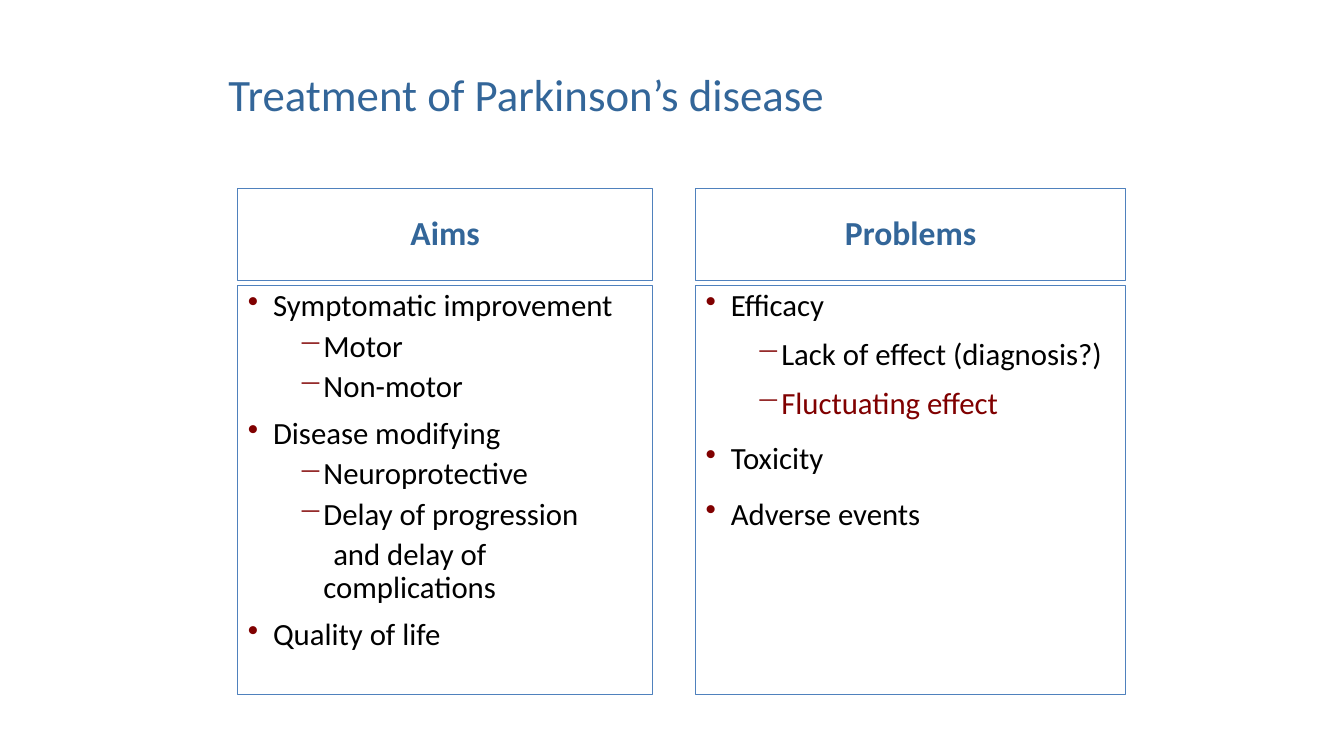
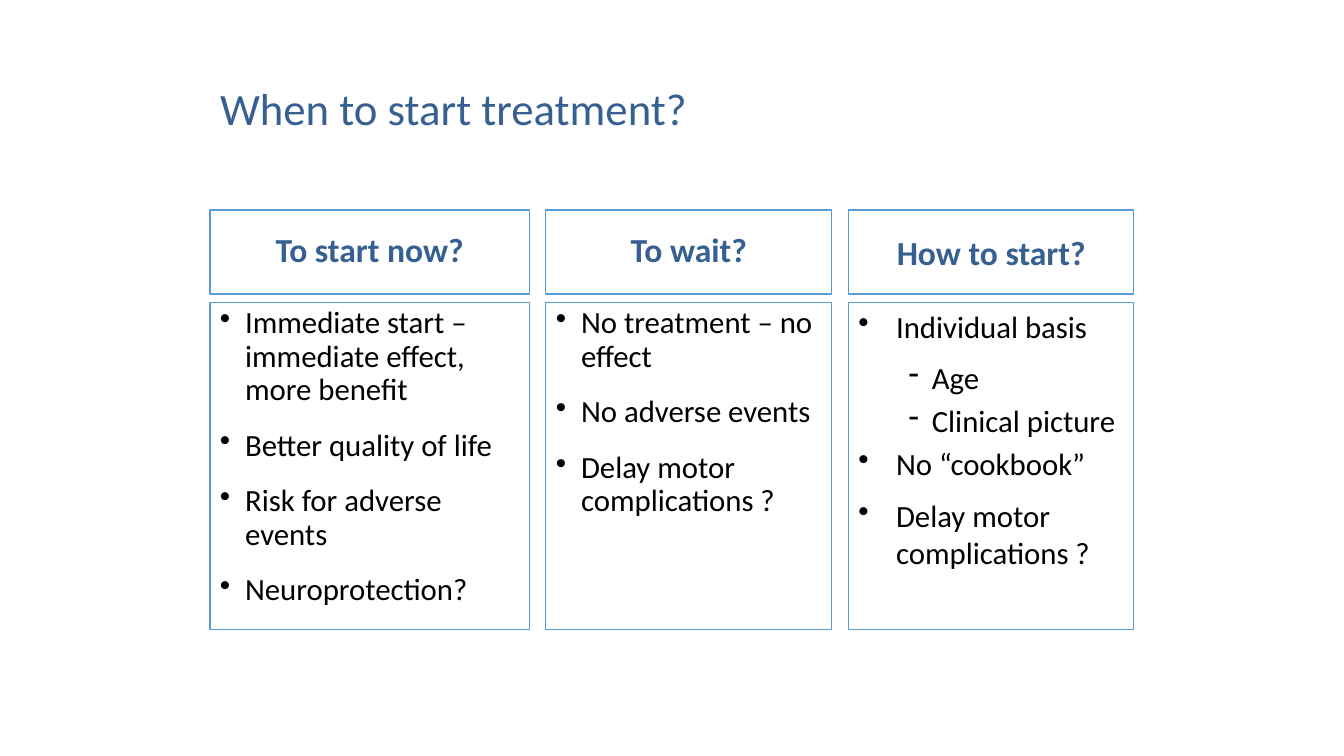
import pptx
import pptx.util
import pptx.dml.color
import pptx.enum.shapes
import pptx.enum.text
import pptx.oxml.ns
import lxml.etree

Pt = pptx.util.Pt
RGB = pptx.dml.color.RGBColor
ALIGN = pptx.enum.text.PP_ALIGN
ANCHOR = pptx.enum.text.MSO_ANCHOR

BLACK = RGB(0, 0, 0)
RED = RGB(0x80, 0, 0)
TEAL = RGB(0x33, 0x66, 0x99)
NAVY = RGB(0x37, 0x60, 0x92)
STEEL = RGB(0x4F, 0x81, 0xBD)
SKY = RGB(0x5B, 0x9B, 0xD5)
FACE = "Calibri"

TIGHT = {"line": 0.9, "head": 10, "before": (10, 5)}
LOOSE = {"line": 1.0, "head": 4.8, "before": (4.4, 4.4)}

KINDS = {
    "dot": (0, 18, -18, "•"),
    "dash": (1, 54, -18, "−"),
    "more": (1, 54, 7, None),
    "wide": (0, 27, -27, "•"),
    "tick": (1, 52.5, -16.5, "-"),
}

SLIDES = [
    {
        "title": "Treatment of Parkinson’s disease",
        "place": (156, 24), "ink": TEAL, "edge": STEEL, "mark": RED,
        "left": 170, "gap": 31, "head": (134.6, 65.5), "body": (203.8, 292.3),
        "cols": [
            ("Aims", 296, TIGHT, [
                ("dot", "Symptomatic improvement", 0),
                ("dash", "Motor", 0),
                ("dash", "Non-motor", 0),
                ("dot", "Disease modifying", 0),
                ("dash", "Neuroprotective", 0),
                ("dash", "Delay of progression", 0),
                ("more", "and delay of complications", 0),
                ("dot", "Quality of life", 0),
            ]),
            ("Problems", 307, TIGHT, [
                ("dot", "Efficacy", 6),
                ("dash", "Lack of effect (diagnosis?)", 6),
                ("dash", "Fluctuating effect", 6, RED),
                ("dot", "Toxicity", 6),
                ("dot", "Adverse events", 6),
            ]),
        ],
    },
    {
        "title": "When to start treatment?",
        "place": (150, 34), "ink": NAVY, "edge": SKY, "mark": None,
        "left": 150, "gap": 12, "head": (150, 60), "body": (216, 234),
        "cols": [
            ("To start now?", 228, TIGHT, [
                ("dot", "Immediate start – immediate effect, more benefit", 6),
                ("dot", "Better quality of life", 6),
                ("dot", "Risk for adverse events", 6),
                ("dot", "Neuroprotection?", 6),
            ]),
            ("To wait?", 204, TIGHT, [
                ("dot", "No treatment – no effect", 6),
                ("dot", "No adverse events", 6),
                ("dot", "Delay motor complications ?", 6),
            ]),
            ("How to start?", 204, LOOSE, [
                ("wide", "Individual basis", 6),
                ("tick", "Age", 0),
                ("tick", "Clinical picture", 0),
                ("wide", "No “cookbook”", 6),
                ("wide", "Delay motor complications ?", 6),
            ]),
        ],
    },
]


def style(para, text, size, ink, line, before=0, after=0, bold=False):
    para.text = text
    para.line_spacing = line
    para.space_before = Pt(before)
    para.space_after = Pt(after)
    font = para.font
    font.name = FACE
    font.size = Pt(size)
    font.bold = bold
    font.color.rgb = ink


def dent(para, left, first, sign, mark):
    props = para._p.get_or_add_pPr()
    props.set("marL", str(Pt(left)))
    props.set("indent", str(Pt(first)))
    tag = pptx.oxml.ns.qn
    if not sign:
        lxml.etree.SubElement(props, tag("a:buNone"))
        return
    if mark:
        tint = lxml.etree.SubElement(props, tag("a:buClr"))
        lxml.etree.SubElement(tint, tag("a:srgbClr")).set("val", str(mark))
    lxml.etree.SubElement(props, tag("a:buChar")).set("char", sign)


def box(slide, left, top, width, height, edge, anchor):
    shape = slide.shapes.add_shape(
        pptx.enum.shapes.MSO_SHAPE.RECTANGLE,
        Pt(left), Pt(top), Pt(width), Pt(height))
    shape.shadow.inherit = False
    shape.fill.background()
    shape.line.color.rgb = edge
    shape.line.width = Pt(0.75)
    frame = shape.text_frame
    frame.word_wrap = True
    frame.vertical_anchor = anchor
    return frame


def name(slide, data):
    title = slide.shapes.title
    title.left, title.top = map(Pt, data["place"])
    title.width, title.height = Pt(648), Pt(90)
    frame = title.text_frame
    frame.word_wrap = True
    frame.auto_size = pptx.enum.text.MSO_AUTO_SIZE.NONE
    frame.vertical_anchor = ANCHOR.MIDDLE
    para = frame.paragraphs[0]
    para.alignment = ALIGN.LEFT
    style(para, data["title"], 32, data["ink"], 0.9)


def items(frame, rows, mode, mark):
    for spot, (kind, text, after, *ink) in enumerate(rows):
        para = frame.add_paragraph() if spot else frame.paragraphs[0]
        level, left, first, sign = KINDS[kind]
        para.level = level
        para.alignment = ALIGN.LEFT
        dent(para, left, first, sign, mark)
        style(para, text, 22, ink[0] if ink else BLACK, mode["line"],
              mode["before"][level], after)


def build(deck, data):
    slide = deck.slides.add_slide(deck.slide_layouts[5])
    name(slide, data)
    left = data["left"]
    for head, width, mode, rows in data["cols"]:
        top, tall = data["head"]
        frame = box(slide, left, top, width, tall, data["edge"], ANCHOR.MIDDLE)
        para = frame.paragraphs[0]
        para.alignment = ALIGN.CENTER
        style(para, head, 24, data["ink"], mode["line"], mode["head"], bold=True)
        top, tall = data["body"]
        frame = box(slide, left, top, width, tall, data["edge"], ANCHOR.TOP)
        items(frame, rows, mode, data["mark"])
        left += width + data["gap"]


def main():
    deck = pptx.Presentation()
    deck.slide_width, deck.slide_height = Pt(960), Pt(540)
    for data in SLIDES:
        build(deck, data)
    deck.save("out.pptx")


if __name__ == "__main__":
    main()
